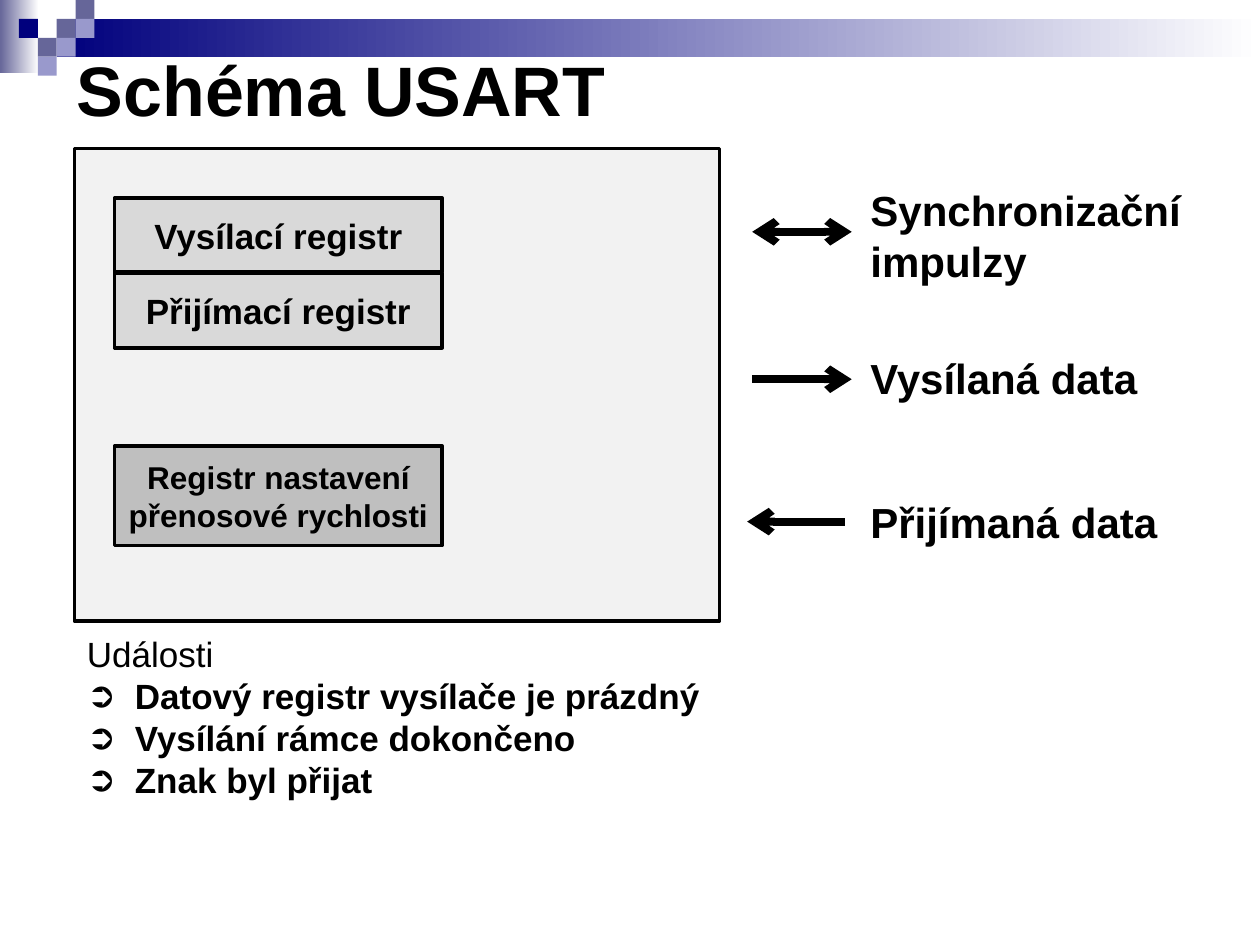
from dataclasses import dataclass

from lxml import etree
from pptx import Presentation
from pptx.dml.color import RGBColor
from pptx.enum.shapes import MSO_CONNECTOR, MSO_SHAPE
from pptx.enum.text import MSO_ANCHOR, MSO_AUTO_SIZE, PP_ALIGN
from pptx.oxml.ns import qn
from pptx.util import Inches, Pt

RECTANGLE = MSO_SHAPE.RECTANGLE
STRAIGHT = MSO_CONNECTOR.STRAIGHT
MIDDLE = MSO_ANCHOR.MIDDLE
NO_AUTOFIT = MSO_AUTO_SIZE.NONE
LEFT, CENTER = PP_ALIGN.LEFT, PP_ALIGN.CENTER


@dataclass(frozen=True)
class Theme:
    font: str = "Arial"
    ink: str = "000000"
    white: str = "FFFFFF"
    navy: str = "00007D"
    slate: str = "666699"
    lavender: str = "9999CC"
    panel: str = "F2F2F2"
    register: str = "D9D9D9"
    rate_register: str = "BFBFBF"
    title_size: int = 40
    label_size: int = 24
    text_size: int = 20
    small_size: int = 18
    outline: float = 2
    arrow: float = 4.5


@dataclass(frozen=True)
class Box:
    left: float
    top: float
    width: float
    height: float

    def lengths(self) -> tuple:
        return tuple(Inches(value) for value in (self.left, self.top, self.width, self.height))


@dataclass(frozen=True)
class Block:
    box: Box
    fill: str
    text: str = ""
    size: int = 20


@dataclass(frozen=True)
class Label:
    box: Box
    text: str


@dataclass(frozen=True)
class Arrow:
    start: float
    end: float
    y: float
    ends: tuple


THEME = Theme()
TILE = 0.15
GRADIENTS = [
    (Box(0, 0, 0.31, 0.58), THEME.slate),
    (Box(0.45, 0.15, 9.55, 0.3), THEME.navy),
]
TILES = [
    (3, 1, THEME.slate), (4, 0, THEME.slate), (4, 1, THEME.lavender), (2, 2, THEME.slate),
    (1, 1, THEME.navy), (3, 2, THEME.lavender), (2, 3, THEME.lavender),
]
BLOCKS = [
    Block(Box(0.59, 1.18, 5.12, 3.75), THEME.panel),
    Block(Box(0.91, 1.57, 2.6, 0.59), THEME.register, "Vysílací registr", THEME.text_size),
    Block(Box(0.91, 2.17, 2.6, 0.59), THEME.register, "Přijímací registr", THEME.text_size),
    Block(Box(0.91, 3.54, 2.6, 0.79), THEME.rate_register,
          "Registr nastavení přenosové rychlosti", THEME.small_size),
]
LABELS = [
    Label(Box(6.81, 1.41, 2.91, 0.91), "Synchronizační impulzy"),
    Label(Box(6.81, 2.75, 2.6, 0.5), "Vysílaná data"),
    Label(Box(6.81, 3.89, 2.6, 0.5), "Přijímaná data"),
]
ARROWS = [
    Arrow(5.97, 6.76, 1.84, ("a:headEnd", "a:tailEnd")),
    Arrow(5.97, 6.76, 3.01, ("a:tailEnd",)),
    Arrow(5.93, 6.71, 4.14, ("a:headEnd",)),
]
EVENTS = ["Datový registr vysílače je prázdný", "Vysílání rámce dokončeno", "Znak byl přijat"]


def apply_format(target, values: dict) -> None:
    for name, value in values.items():
        setattr(target, name, value)


def color(value: str) -> RGBColor:
    return RGBColor.from_string(value)


def place(shape, box: Box) -> None:
    apply_format(shape, dict(zip(("left", "top", "width", "height"), box.lengths())))


def prepare_frame(shape):
    frame = shape.text_frame
    apply_format(frame, {
        "word_wrap": True, "auto_size": NO_AUTOFIT, "vertical_anchor": MIDDLE,
        "margin_left": Inches(0.1), "margin_right": Inches(0.1),
        "margin_top": Inches(0.05), "margin_bottom": Inches(0.05),
    })
    return frame


def write(paragraph, text: str, size: int, bold: bool = True, alignment=LEFT) -> None:
    apply_format(paragraph, {"alignment": alignment, "space_before": Pt(0), "space_after": Pt(0)})
    run = paragraph.add_run()
    run.text = text
    apply_format(run.font, {"name": THEME.font, "size": Pt(size), "bold": bold})
    run.font.color.rgb = color(THEME.ink)


def add_rectangle(slide, box: Box):
    shape = slide.shapes.add_shape(RECTANGLE, *box.lengths())
    shape.shadow.inherit = False
    return shape


def add_decoration(slide, box: Box, fill_color: str, fades: bool = False) -> None:
    shape = add_rectangle(slide, box)
    shape.line.fill.background()
    if fades:
        shape.fill.gradient()
        shape.fill.gradient_angle = 0
        for stop, value in zip(shape.fill.gradient_stops, (fill_color, THEME.white)):
            stop.color.rgb = color(value)
    else:
        shape.fill.solid()
        shape.fill.fore_color.rgb = color(fill_color)
    slide.shapes.title.element.addprevious(shape.element)


def add_block(slide, block: Block) -> None:
    shape = add_rectangle(slide, block.box)
    shape.fill.solid()
    shape.fill.fore_color.rgb = color(block.fill)
    shape.line.color.rgb = color(THEME.ink)
    shape.line.width = Pt(THEME.outline)
    if block.text:
        paragraph = prepare_frame(shape).paragraphs[0]
        write(paragraph, block.text, block.size, alignment=CENTER)


def add_label(slide, label: Label) -> None:
    shape = slide.shapes.add_textbox(*label.box.lengths())
    write(prepare_frame(shape).paragraphs[0], label.text, THEME.label_size)


def add_arrow(slide, arrow: Arrow) -> None:
    y = Inches(arrow.y)
    connector = slide.shapes.add_connector(STRAIGHT, Inches(arrow.start), y, Inches(arrow.end), y)
    connector.line.color.rgb = color(THEME.ink)
    connector.line.width = Pt(THEME.arrow)
    properties = connector.element.spPr
    line = properties.find(qn("a:ln"))
    for end in arrow.ends:
        etree.SubElement(line, qn(end), type="arrow")
    etree.SubElement(properties, qn("a:effectLst"))


def set_bullet(paragraph, indent: float, character: str = "") -> None:
    properties = paragraph._p.get_or_add_pPr()
    properties.set("marL", str(Inches(indent)))
    properties.set("indent", str(-Inches(indent)))
    if character:
        etree.SubElement(properties, qn("a:buChar"), char=character)
    else:
        etree.SubElement(properties, qn("a:buNone"))


def fill_events(placeholder) -> None:
    place(placeholder, Box(0.59, 4.96, 5.12, 1.45))
    frame = prepare_frame(placeholder)
    write(frame.paragraphs[0], "Události", THEME.text_size, bold=False)
    set_bullet(frame.paragraphs[0], 0)
    for event in EVENTS:
        paragraph = frame.add_paragraph()
        write(paragraph, event, THEME.text_size)
        set_bullet(paragraph, 0.38, "➲")


def main() -> None:
    presentation = Presentation()
    apply_format(presentation, {"slide_width": Inches(10), "slide_height": Inches(7.5)})
    slide = presentation.slides.add_slide(presentation.slide_layouts[1])
    for box, fill_color in GRADIENTS:
        add_decoration(slide, box, fill_color, fades=True)
    for column, row, fill_color in TILES:
        add_decoration(slide, Box(column * TILE, row * TILE, TILE, TILE), fill_color)
    title = slide.shapes.title
    place(title, Box(0.51, 0.31, 8.86, 0.79))
    write(prepare_frame(title).paragraphs[0], "Schéma USART", THEME.title_size)
    fill_events(slide.placeholders[1])
    for draw, items in ((add_block, BLOCKS), (add_label, LABELS), (add_arrow, ARROWS)):
        for item in items:
            draw(slide, item)
    presentation.save("out.pptx")


if __name__ == "__main__":
    main()
